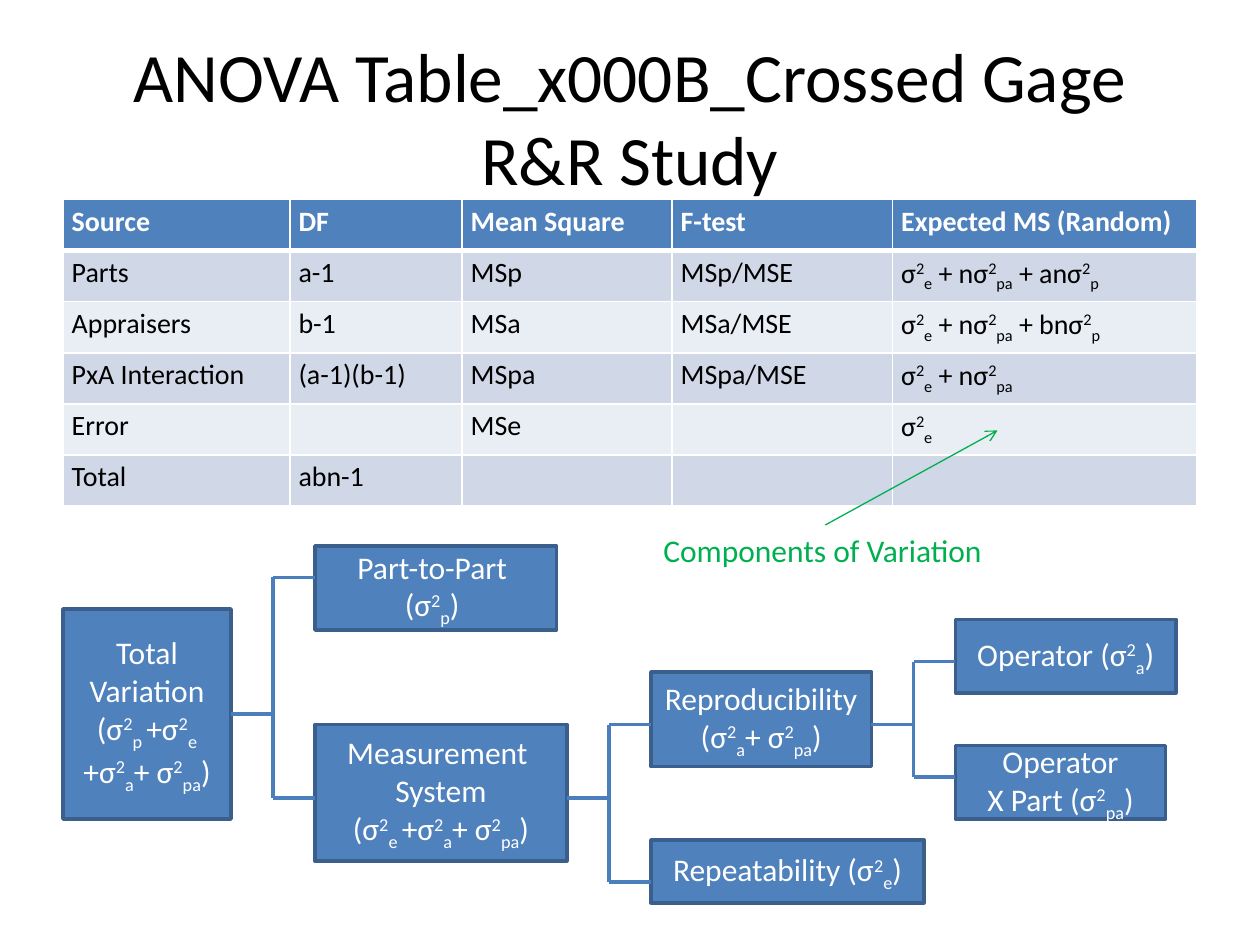
from lxml import etree
from pptx import Presentation
from pptx.dml.color import RGBColor
from pptx.enum.shapes import MSO_CONNECTOR, MSO_SHAPE
from pptx.enum.text import MSO_ANCHOR, PP_ALIGN
from pptx.oxml.ns import qn
from pptx.util import Pt

STRAIGHT = MSO_CONNECTOR.STRAIGHT
RECTANGLE = MSO_SHAPE.RECTANGLE
MIDDLE = MSO_ANCHOR.MIDDLE
CENTER = PP_ALIGN.CENTER
LEFT = PP_ALIGN.LEFT
RIGHT_SIDE = 3

FONT = "Calibri"
COLORS = {
    "text": "000000",
    "white": "FFFFFF",
    "box": "4F81BD",
    "box_edge": "3A5F8C",
    "branch": "4B7EBC",
    "band_dark": "D0D8E8",
    "band_light": "E9EDF4",
    "note": "00B050",
}
BASELINES = {"^": "30000", "_": "-25000"}

# In formulas "|" separates runs; "^" starts a superscript, "_" a subscript.
E, P, A, PA = (f"σ|^2|_{index}|" for index in ("e", "p", "a", "pa"))

COLUMN_WIDTHS = [129.6, 98.4, 120, 126, 174]
ROW_HEIGHT = 29.2
ANOVA_ROWS = [
    ["Source", "DF", "Mean Square", "F-test", "Expected MS (Random)"],
    ["Parts", "a-1", "MSp", "MSp/MSE", f"{E} + n{PA} + an{P}"],
    ["Appraisers", "b-1", "MSa", "MSa/MSE", f"{E} + n{PA} + bn{P}"],
    ["PxA Interaction", "(a-1)(b-1)", "MSpa", "MSpa/MSE", f"{E} + n{PA}"],
    ["Error", "", "MSe", "", E],
    ["Total", "abn-1", "", "", ""],
]

# left, top, width, height, paragraphs
TOTAL_VARIATION = (36, 348, 96, 120,
                   ["Total", "Variation", f"(σ|^2|_p |+σ|^2|_e |+{A}+ {PA})"])
COMPONENTS = [
    (180, 312, 138, 48, ["Part-to-Part ", f"({P}) "]),
    (180, 414, 144, 78, ["Measurement ", "System", f"(σ|^2|_e |+{A}+ {PA})"]),
    (372, 480, 156, 36, [f"Repeatability ({E})"]),
    (372, 384, 126, 54, ["Reproducibility", f"({A}+ {PA})"]),
    (546, 354, 126, 42, [f"Operator ({A})"]),
    (546, 426, 120, 42, ["Operator", f"X Part ({PA})"]),
]
# trunk x, stem y, upper branch y, lower branch y
BRACKETS = [(156, 408, 330, 456), (348, 456, 414, 504), (522, 414, 378, 444)]
BRANCH_LENGTH = 24


def rgb(name):
    return RGBColor.from_string(COLORS[name])


def write_formula(paragraph, markup, size, color, bold=False, align=LEFT):
    """Write text whose runs are split by "|" and raised or lowered by "^" and "_"."""
    paragraph.alignment = align
    for piece in filter(None, markup.split("|")):
        run = paragraph.add_run()
        run.text = piece.lstrip("^_")
        run.font.name = FONT
        run.font.size = Pt(size)
        run.font.bold = bold
        run.font.color.rgb = rgb(color)
        if piece[0] in BASELINES:
            run.font._element.set("baseline", BASELINES[piece[0]])


def add_title(slide):
    frame = slide.shapes.add_textbox(Pt(36), Pt(21.6), Pt(648), Pt(90)).text_frame
    frame.word_wrap = True
    frame.vertical_anchor = MIDDLE
    write_formula(frame.paragraphs[0], "ANOVA Table\vCrossed Gage R&R Study",
                  39.6, "text", align=CENTER)


def set_border(cell, side, width):
    edge = etree.SubElement(cell._tc.get_or_add_tcPr(), qn(f"a:ln{side}"), w=str(Pt(width)))
    fill = etree.SubElement(edge, qn("a:solidFill"))
    etree.SubElement(fill, qn("a:srgbClr"), val=COLORS["white"])


def add_anova_table(slide):
    frame = slide.shapes.add_table(len(ANOVA_ROWS), len(COLUMN_WIDTHS), Pt(36), Pt(114),
                                   Pt(sum(COLUMN_WIDTHS)), Pt(ROW_HEIGHT * len(ANOVA_ROWS)))
    table = frame.table
    for column, width in zip(table.columns, COLUMN_WIDTHS):
        column.width = Pt(width)
    for r, values in enumerate(ANOVA_ROWS):
        table.rows[r].height = Pt(ROW_HEIGHT)
        header = r == 0
        band = "box" if header else "band_dark" if r % 2 else "band_light"
        for c, value in enumerate(values):
            cell = table.cell(r, c)
            cell.margin_left = cell.margin_right = Pt(5)
            cell.margin_top = cell.margin_bottom = 0
            for side, width in (("L", 1), ("R", 1), ("T", 3 if r == 1 else 1),
                                ("B", 3 if header else 1)):
                set_border(cell, side, width)
            cell.fill.solid()
            cell.fill.fore_color.rgb = rgb(band)
            paragraph = cell.text_frame.paragraphs[0]
            paragraph.line_spacing = 1.15
            write_formula(paragraph, value, 16, "white" if header else "text", header)


def add_component(shapes, left, top, width, height, lines):
    box = shapes.add_shape(RECTANGLE, Pt(left), Pt(top), Pt(width), Pt(height))
    box.shadow.inherit = False
    box.fill.solid()
    box.fill.fore_color.rgb = rgb("box")
    box.line.color.rgb = rgb("box_edge")
    box.line.width = Pt(2)
    frame = box.text_frame
    frame.vertical_anchor = MIDDLE
    for i, line in enumerate(lines):
        paragraph = frame.add_paragraph() if i else frame.paragraphs[0]
        write_formula(paragraph, line, 18, "white", align=CENTER)
    return box


def add_line(shapes, start, end, color="branch", width=2):
    line = shapes.add_connector(STRAIGHT, *map(Pt, start + end))
    line.line.color.rgb = rgb(color)
    line.line.width = Pt(width)
    etree.SubElement(line._element.spPr, qn("a:effectLst"))
    return line


def add_bracket(shapes, x, stem_y, upper_y, lower_y):
    """Draw a trunk with two branches to its right and return its stem."""
    add_line(shapes, (x, upper_y), (x, lower_y))
    for y in (upper_y, lower_y):
        add_line(shapes, (x + BRANCH_LENGTH, y), (x, y))
    return add_line(shapes, (x - BRANCH_LENGTH, stem_y), (x, stem_y))


def add_variation_tree(slide):
    shapes = slide.shapes.add_group_shape().shapes
    total = add_component(shapes, *TOTAL_VARIATION)
    for component in COMPONENTS:
        add_component(shapes, *component)
    stems = [add_bracket(shapes, *bracket) for bracket in BRACKETS]
    stems[0].begin_connect(total, RIGHT_SIDE)


def add_note(slide):
    frame = slide.shapes.add_textbox(Pt(372), Pt(300), Pt(198.6), Pt(29)).text_frame
    frame.word_wrap = False
    write_formula(frame.paragraphs[0], "Components of Variation", 18, "note")
    arrow = add_line(slide.shapes, (471.6, 300), (570, 246), "note", 0.75)
    etree.SubElement(arrow.line._get_or_add_ln(), qn("a:tailEnd"), type="arrow")


def main():
    presentation = Presentation()
    presentation.slide_width = Pt(720)
    presentation.slide_height = Pt(540)
    slide = presentation.slides.add_slide(presentation.slide_layouts[6])
    add_title(slide)
    add_anova_table(slide)
    add_variation_tree(slide)
    add_note(slide)
    presentation.save("out.pptx")


if __name__ == "__main__":
    main()
